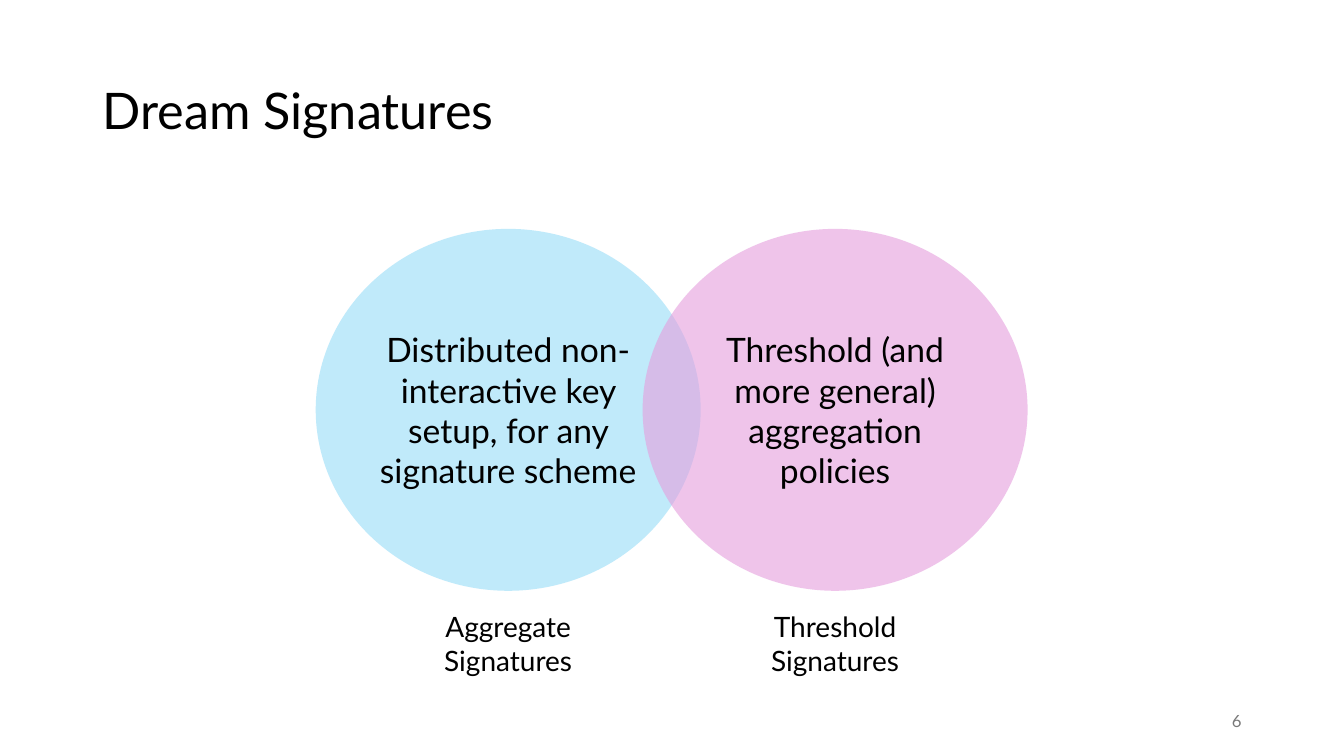
from lxml import etree
from pptx import Presentation
from pptx.dml.color import RGBColor
from pptx.enum.shapes import MSO_SHAPE
from pptx.enum.text import MSO_ANCHOR, PP_ALIGN
from pptx.oxml.ns import qn
from pptx.util import Pt

OVAL = MSO_SHAPE.OVAL
TOP, MIDDLE = MSO_ANCHOR.TOP, MSO_ANCHOR.MIDDLE
LEFT, CENTER, RIGHT = PP_ALIGN.LEFT, PP_ALIGN.CENTER, PP_ALIGN.RIGHT
TITLE_ONLY = 5


def color(value):
    return RGBColor.from_string(value)


class Page:
    """Holds the text style and the slide being built."""

    font = "Lato"
    ink = "000000"

    def __init__(self, deck):
        self.slide = deck.slides.add_slide(deck.slide_layouts[TITLE_ONLY])

    def set_text(self, box, text, size, align, anchor=MIDDLE, ink=None, inset=7.2):
        frame = box.text_frame
        frame.word_wrap = True
        frame.vertical_anchor = anchor
        frame.margin_left = frame.margin_right = Pt(inset)
        frame.text = text
        para = frame.paragraphs[0]
        para.alignment = align
        para.font.name = self.font
        para.font.size = Pt(size)
        para.font.color.rgb = color(ink or self.ink)
        return para

    def title(self, text, left, top, width, height):
        box = self.slide.shapes.title
        box.left, box.top, box.width, box.height = map(Pt, (left, top, width, height))
        self.set_text(box, text, 36, LEFT).line_spacing = 0.9

    def label(self, text, left, top, width, height, size, align, **style):
        box = self.slide.shapes.add_textbox(*map(Pt, (left, top, width, height)))
        self.set_text(box, text, size, align, **style)

    def circle(self, text, left, top, width, height, fill, opacity=60):
        shape = self.slide.shapes.add_shape(OVAL, *map(Pt, (left, top, width, height)))
        shape.shadow.inherit = False
        shape.line.fill.background()
        shape.fill.solid()
        shape.fill.fore_color.rgb = color(fill)
        tint = shape.element.spPr.find(qn("a:solidFill"))[0]
        etree.SubElement(tint, qn("a:alpha")).set("val", str(opacity * 1000))
        self.set_text(shape, text, 24, CENTER, inset=0)


def main():
    deck = Presentation()
    deck.slide_width, deck.slide_height = Pt(960), Pt(540)
    page = Page(deck)
    page.title("Dream Signatures", 66, 28.8, 828, 104.4)
    page.label("6", 678, 500.5, 216, 28.75, 12, RIGHT, ink="797979")

    circle_width, label_width = 275, 197.5
    schemes = [
        (225.5, "96DCF8", "Aggregate Signatures",
         "Distributed non-interactive key setup, for any signature scheme"),
        (459, "E59EDD", "Threshold Signatures",
         "Threshold (and more general) aggregation policies"),
    ]
    for left, fill, name, strength in schemes:
        page.circle(strength, left, 163.5, circle_width, 258.5, fill)
        label_left = left + (circle_width - label_width) / 2
        page.label(name, label_left, 432, label_width, 31.5, 20, CENTER,
                   anchor=TOP, inset=12)

    deck.save("out.pptx")


if __name__ == "__main__":
    main()
